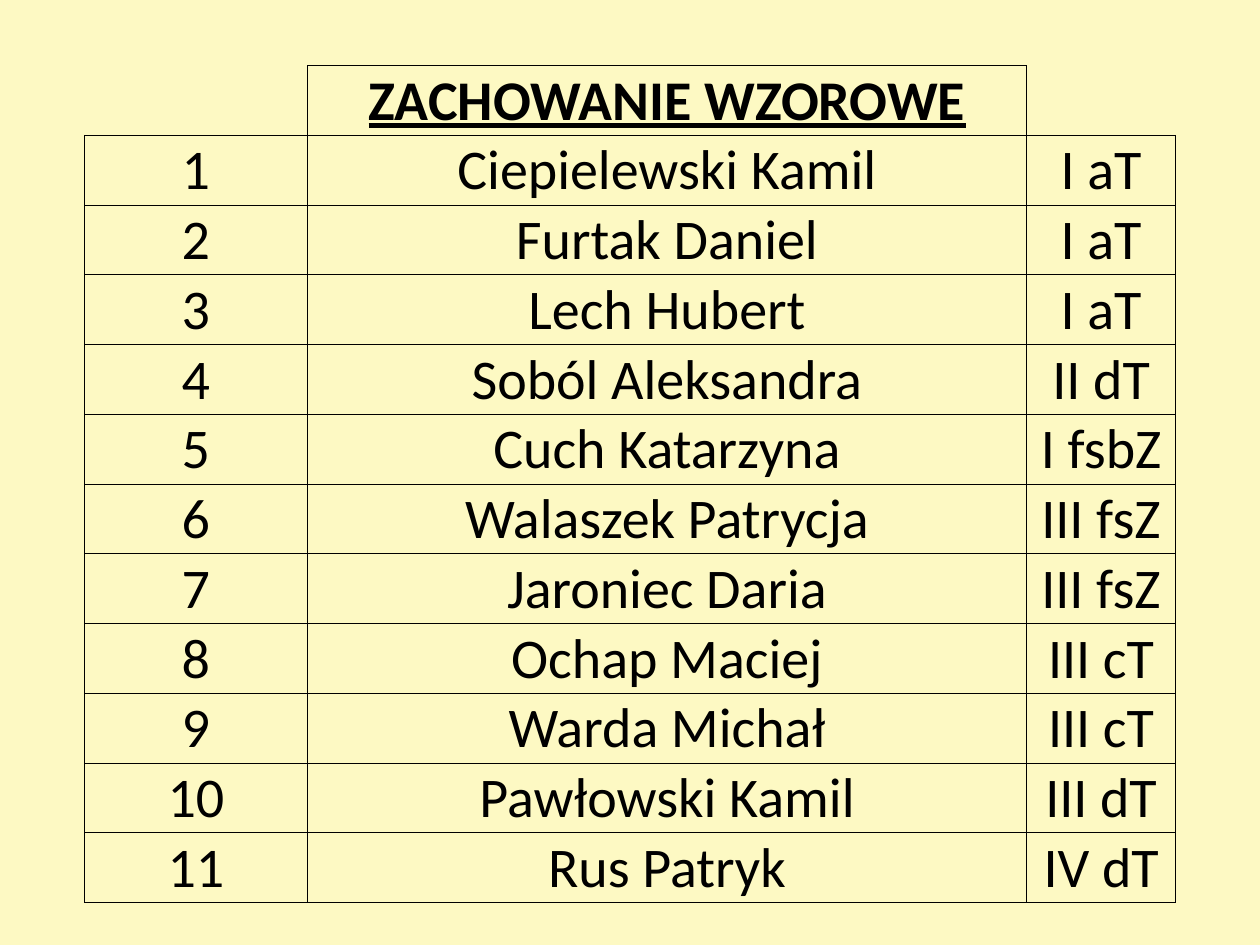
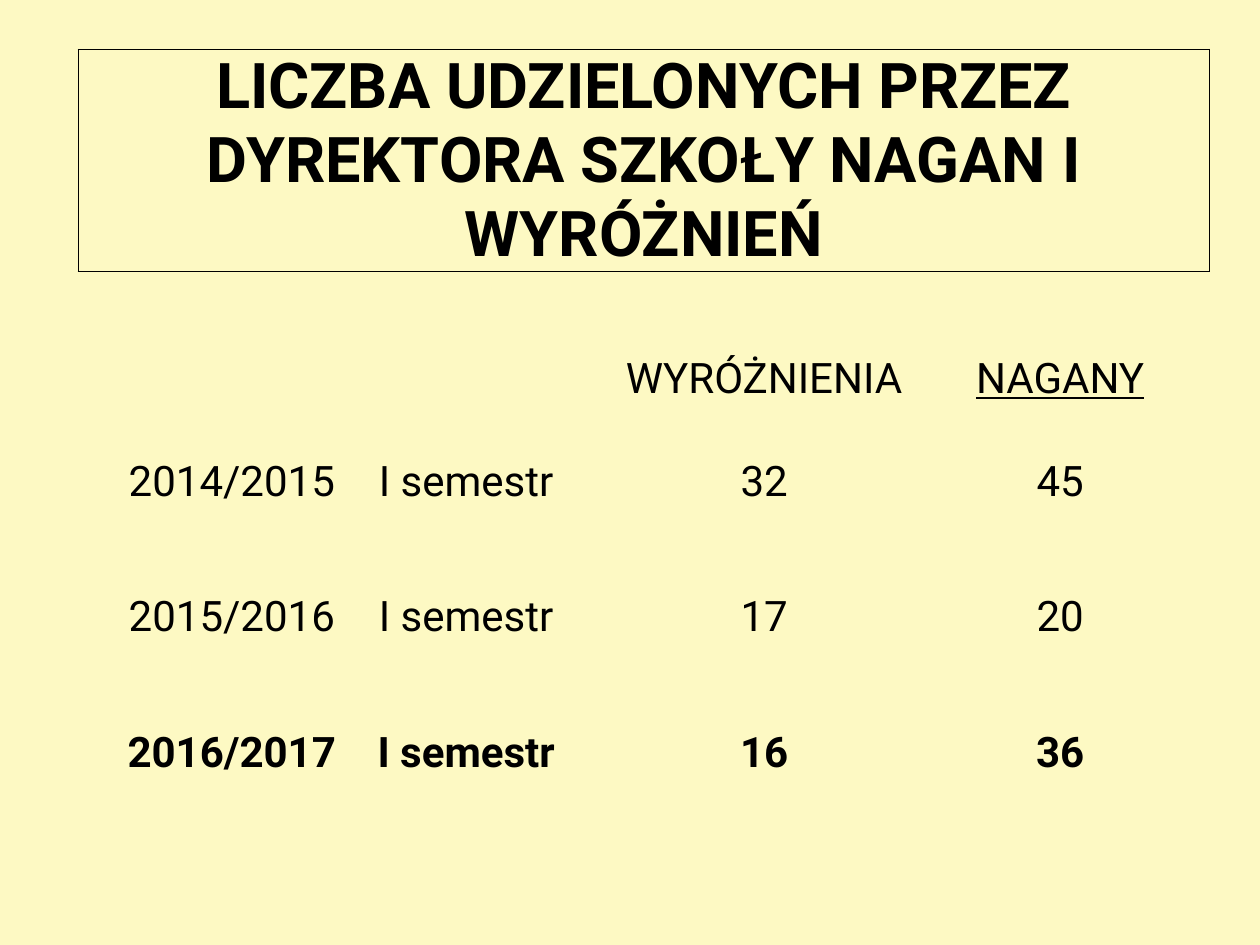
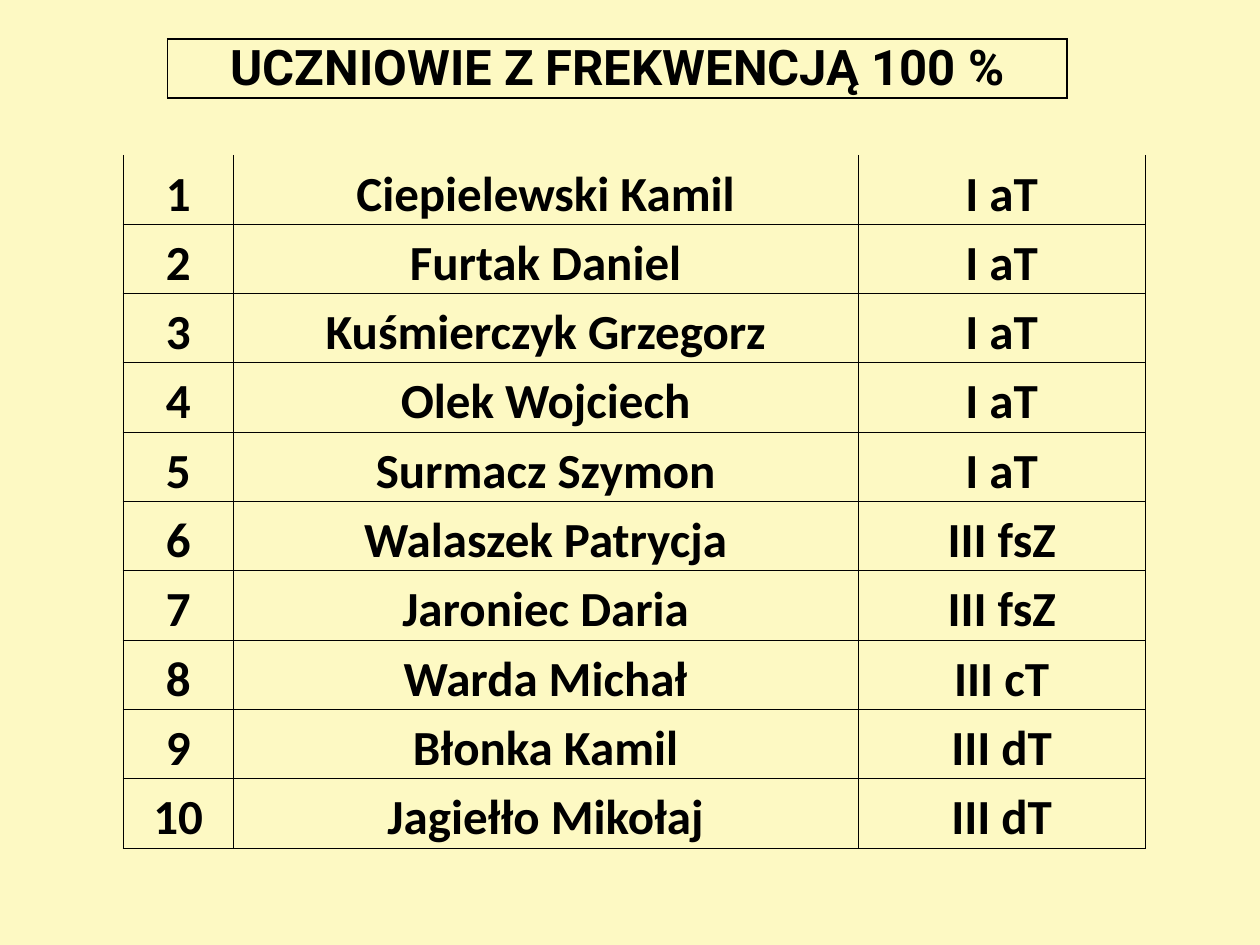
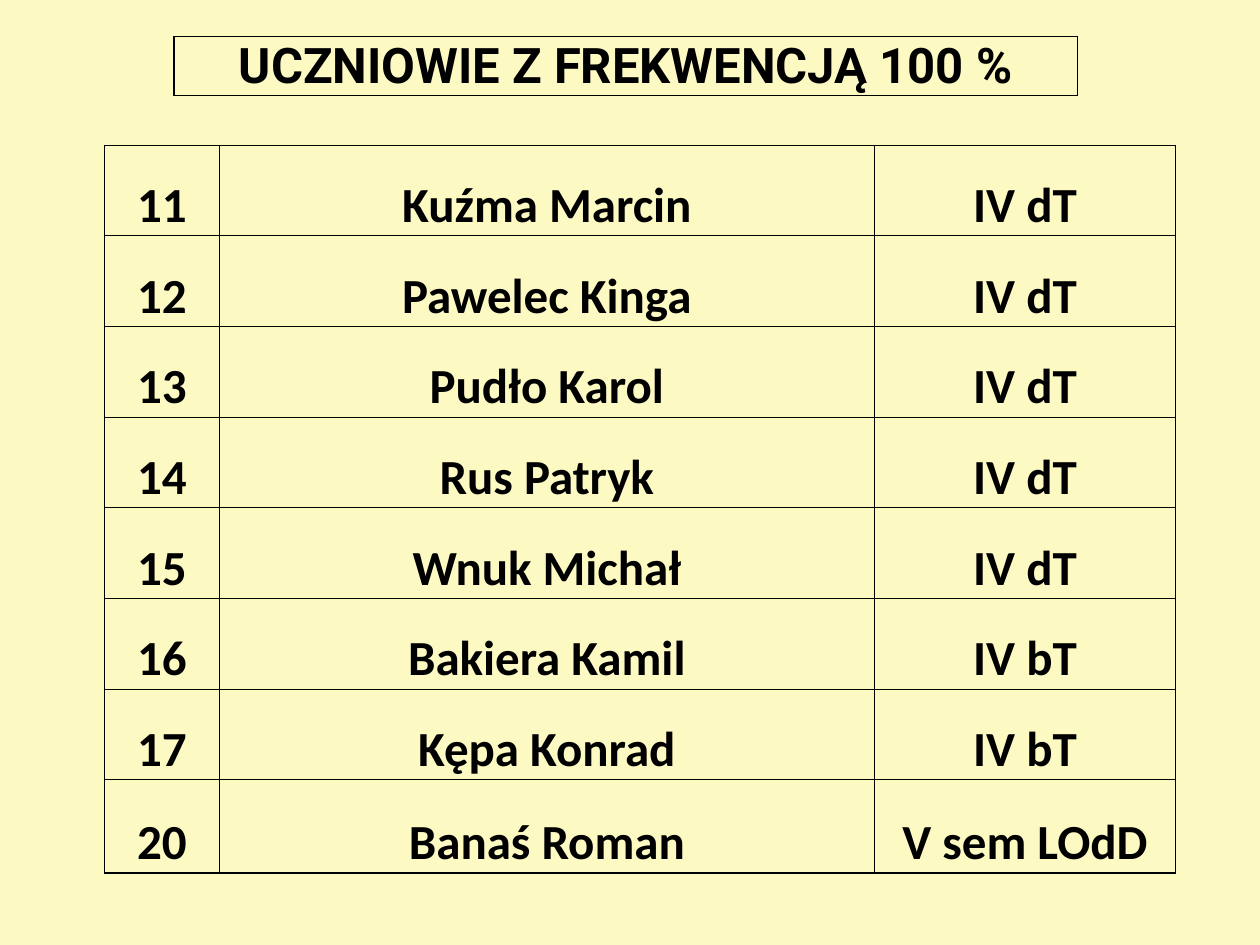
from dataclasses import dataclass

from lxml.etree import SubElement
from pptx import Presentation
from pptx.dml.color import RGBColor
from pptx.enum.text import MSO_ANCHOR as Anchor, PP_ALIGN as Align
from pptx.oxml.ns import qn
from pptx.util import Inches, Pt

BLACK = RGBColor(0x00, 0x00, 0x00)
CREAM = RGBColor(0xFD, 0xF6, 0x9C)
CREAM_OPACITY = 60
HEADING_FONT = "Roboto"
LIST_FONT = "Calibri"
PLAIN_TABLE_STYLE = "{2D5ABB26-0587-4C30-8999-92F81FD0307C}"
BLANK_LAYOUT = 6


@dataclass(frozen=True)
class Borders:
    """Line widths in points; zero means no line."""
    left: float = 0
    right: float = 0
    top: float = 0
    bottom: float = 0
    inner: float = 0


@dataclass(frozen=True)
class TextStyle:
    font: str
    size: float
    bold: bool = False
    anchor: Anchor = Anchor.BOTTOM


@dataclass(frozen=True)
class Grid:
    left: float
    top: float
    columns: tuple[float, ...]
    row_heights: tuple[float, ...]
    rows: list[tuple[str, ...]]
    style: TextStyle
    borders: Borders = Borders()
    bold_row: int | None = None
    underlined: str = ""


THIN_FRAME = Borders(0.5, 0.5, 0.5, 0.5, 0.5)
TITLE_FRAME = Borders(1, 1, 1, 1)
TITLE_STYLE = TextStyle(HEADING_FONT, 28, bold=True, anchor=Anchor.MIDDLE)
ATTENDANCE_STYLE = TextStyle(LIST_FONT, 28, bold=True)


def numbered(pupils: list[tuple[str, str]], first: int = 1) -> list[tuple[str, ...]]:
    return [(str(number), *pupil) for number, pupil in enumerate(pupils, first)]


def attendance_title(left: float, top: float, width: float) -> Grid:
    return Grid(left, top, (width,), (0.47,), [("UCZNIOWIE Z FREKWENCJĄ 100 %",)],
                TITLE_STYLE, TITLE_FRAME)


EXEMPLARY_PUPILS = [
    ("Ciepielewski Kamil", "I aT"),
    ("Furtak Daniel", "I aT"),
    ("Lech Hubert", "I aT"),
    ("Soból Aleksandra", "II dT"),
    ("Cuch Katarzyna", "I fsbZ"),
    ("Walaszek Patrycja", "III fsZ"),
    ("Jaroniec Daria", "III fsZ"),
    ("Ochap Maciej", "III cT"),
    ("Warda Michał", "III cT"),
    ("Pawłowski Kamil", "III dT"),
    ("Rus Patryk", "IV dT"),
]
FIRST_ATTENDANCE = [
    ("Ciepielewski Kamil", "I aT"),
    ("Furtak Daniel", "I aT"),
    ("Kuśmierczyk Grzegorz", "I aT"),
    ("Olek Wojciech", "I aT"),
    ("Surmacz Szymon", "I aT"),
    ("Walaszek Patrycja", "III fsZ"),
    ("Jaroniec Daria", "III fsZ"),
    ("Warda Michał", "III cT"),
    ("Błonka Kamil", "III dT"),
    ("Jagiełło Mikołaj", "III dT"),
]
SECOND_ATTENDANCE = [
    ("Kuźma Marcin", "IV dT"),
    ("Pawelec Kinga", "IV dT"),
    ("Pudło Karol", "IV dT"),
    ("Rus Patryk", "IV dT"),
    ("Wnuk Michał", "IV dT"),
    ("Bakiera Kamil", "IV bT"),
    ("Kępa Konrad", "IV bT"),
]
AWARDS_AND_REPRIMANDS = [
    ("", "", "WYRÓŻNIENIA", "NAGANY"),
    ("2014/2015", "I semestr", "32", "45"),
    ("2015/2016", "I semestr", "17", "20"),
    ("2016/2017", "I semestr", "16", "36"),
]

PAGES = [
    [
        Grid(0.67, 0.52, (1.77, 5.71, 1.18), (0.54,) * 12,
             [("", "ZACHOWANIE WZOROWE", ""), *numbered(EXEMPLARY_PUPILS)],
             TextStyle(LIST_FONT, 32), THIN_FRAME,
             bold_row=0, underlined="ZACHOWANIE WZOROWE"),
    ],
    [
        Grid(0.62, 0.39, (8.98,), (1.76,),
             [("LICZBA UDZIELONYCH PRZEZ DYREKTORA SZKOŁY NAGAN I WYRÓŻNIEŃ",)],
             TextStyle(HEADING_FONT, 36, bold=True), THIN_FRAME),
        Grid(0.91, 2.73, (1.86, 1.86, 2.87, 1.83), (0.55, 1.08, 1.07, 1.08),
             AWARDS_AND_REPRIMANDS, TextStyle(HEADING_FONT, 24, anchor=Anchor.MIDDLE),
             bold_row=3, underlined="NAGANY"),
    ],
    [
        attendance_title(1.33, 0.31, 7.14),
        Grid(0.98, 1.23, (0.87, 4.96, 2.28), (0.55,) * 10, numbered(FIRST_ATTENDANCE),
             ATTENDANCE_STYLE, Borders(left=1, right=1, bottom=0.5, inner=0.5)),
    ],
    [
        attendance_title(1.38, 0.29, 7.17),
        Grid(0.83, 1.15, (0.91, 5.2, 2.39), (0.72,) * 7 + (0.74,),
             [*numbered(SECOND_ATTENDANCE, 11), ("20", "Banaś Roman", "V sem LOdD")],
             ATTENDANCE_STYLE, Borders(left=1, right=1, top=0.5, bottom=1, inner=0.5)),
    ],
]


def set_background(master) -> None:
    fill = master.background.fill
    fill.solid()
    fill.fore_color.rgb = CREAM
    colour = master.element.xpath("./p:cSld/p:bg//a:srgbClr")[0]
    SubElement(colour, qn("a:alpha"), val=str(CREAM_OPACITY * 1000))


def add_border(cell, side: str, width: float) -> None:
    properties = cell._tc.get_or_add_tcPr()
    line = SubElement(properties, qn(f"a:ln{side}"), w=str(Pt(width)))
    if width:
        fill = SubElement(line, qn("a:solidFill"))
        SubElement(fill, qn("a:srgbClr"), val=str(BLACK))
    else:
        SubElement(line, qn("a:noFill"))


def frame_cell(cell, grid: Grid, row: int, column: int) -> None:
    """Draw the cell's sides; an empty cell gets no part of the outer frame."""
    borders = grid.borders
    sides = (
        ("L", column == 0, borders.left),
        ("R", column == len(grid.columns) - 1, borders.right),
        ("T", row == 0, borders.top),
        ("B", row == len(grid.rows) - 1, borders.bottom),
    )
    for side, is_outer, outer_width in sides:
        visible_outer = outer_width if grid.rows[row][column] else 0
        add_border(cell, side, visible_outer if is_outer else borders.inner)


def write_cell(cell, text: str, style: TextStyle, bold: bool, underline: bool) -> None:
    cell.margin_left = cell.margin_right = cell.margin_top = Inches(0.01)
    cell.margin_bottom = 0
    cell.vertical_anchor = style.anchor
    if not text:
        return
    para = cell.text_frame.paragraphs[0]
    para.text = text
    para.alignment = Align.CENTER
    font = para.runs[0].font
    font.name = style.font
    font.size = Pt(style.size)
    font.color.rgb = BLACK
    font.bold = bold
    font.underline = underline


def draw_grid(page, grid: Grid) -> None:
    frame = page.shapes.add_table(
        len(grid.rows), len(grid.columns), Inches(grid.left), Inches(grid.top),
        Inches(sum(grid.columns)), Inches(sum(grid.row_heights)))
    table = frame.table
    table.first_row = table.horz_banding = False
    table._tbl.tblPr.find(qn("a:tableStyleId")).text = PLAIN_TABLE_STYLE
    for column, width in zip(table.columns, grid.columns):
        column.width = Inches(width)
    for row, height in zip(table.rows, grid.row_heights):
        row.height = Inches(height)
    for row, texts in enumerate(grid.rows):
        bold = grid.style.bold or row == grid.bold_row
        for column, text in enumerate(texts):
            cell = table.cell(row, column)
            write_cell(cell, text, grid.style, bold, bool(text) and text == grid.underlined)
            frame_cell(cell, grid, row, column)
            cell.fill.background()


def main() -> None:
    deck = Presentation()
    deck.slide_width, deck.slide_height = Inches(10), Inches(7.5)
    set_background(deck.slide_master)
    for grids in PAGES:
        page = deck.slides.add_slide(deck.slide_layouts[BLANK_LAYOUT])
        for grid in grids:
            draw_grid(page, grid)
    deck.save("out.pptx")


if __name__ == "__main__":
    main()
